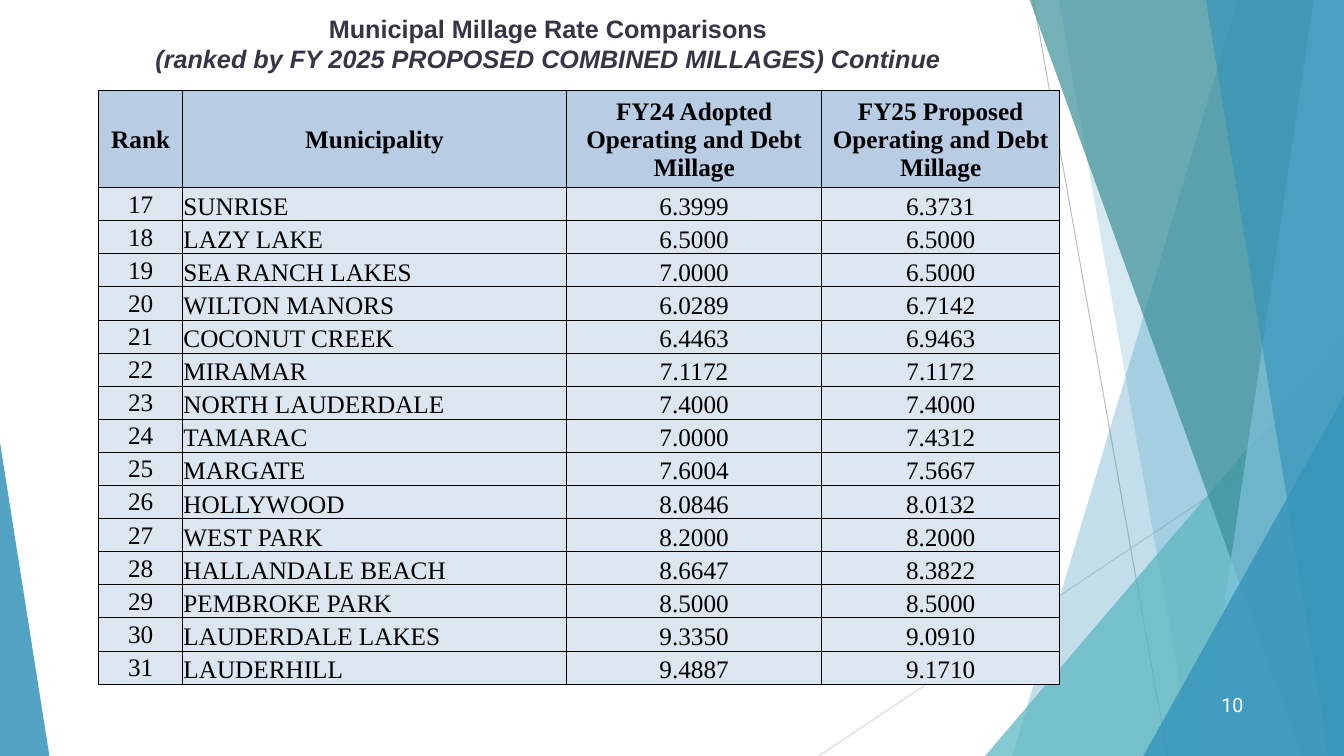
from lxml.etree import SubElement as Sub
from pptx import Presentation
from pptx.dml.color import RGBColor
from pptx.enum.shapes import MSO_CONNECTOR as Link, MSO_SHAPE as Shape
from pptx.enum.text import MSO_ANCHOR as Anchor, PP_ALIGN as Align
from pptx.oxml.ns import qn
from pptx.util import Inches, Pt

WIDE, HIGH = 13.33, 7.5
BLUE, TEAL, PINE, SKY = "3494BA", "58B6C0", "3A8F98", "7FC1DB"

TITLE = [("Municipal Millage Rate Comparisons", False),
         ("(ranked by FY 2025 PROPOSED COMBINED MILLAGES) Continue", True)]
PAGE = "10"
HEADS = ["Rank", "Municipality", "FY24 Adopted Operating and Debt Millage",
         "FY25 Proposed Operating and Debt Millage"]
FIRST = 17
RATES = [
    ("SUNRISE", "6.3999", "6.3731"),
    ("LAZY LAKE", "6.5000", "6.5000"),
    ("SEA RANCH LAKES", "7.0000", "6.5000"),
    ("WILTON MANORS", "6.0289", "6.7142"),
    ("COCONUT CREEK", "6.4463", "6.9463"),
    ("MIRAMAR", "7.1172", "7.1172"),
    ("NORTH LAUDERDALE", "7.4000", "7.4000"),
    ("TAMARAC", "7.0000", "7.4312"),
    ("MARGATE", "7.6004", "7.5667"),
    ("HOLLYWOOD", "8.0846", "8.0132"),
    ("WEST PARK", "8.2000", "8.2000"),
    ("HALLANDALE BEACH", "8.6647", "8.3822"),
    ("PEMBROKE PARK", "8.5000", "8.5000"),
    ("LAUDERDALE LAKES", "9.3350", "9.0910"),
    ("LAUDERHILL", "9.4887", "9.1710"),
]
COLS = [0.83, 3.81, 2.53, 2.36]
LEFT, TOP, TALL, HEAD = 0.98, 0.9, 5.89, 0.96

RAYS = [((10.25, 0), (11.58, HIGH), "BFBFBF"),
        ((WIDE, 4.03), (8.12, HIGH), "D9D9D9")]
# Bands run from an x on the top edge to an x on the bottom edge, then right.
# Peaks stand on the bottom edge: left, width, height, side of the tip.
DECOR = [
    ("band", (12.28, 10.04), BLUE, 30),
    ("band", (10.5, 11.83), BLUE, 20),
    ("peak", (9.77, 3.56, 4.17, 1), TEAL, 72),
    ("band", (10.21, 12.91), PINE, 70),
    ("band", (13.03, 11.92), SKY, 70),
    ("band", (11.96, 13.18), BLUE, 65),
    ("peak", (11.34, 1.99, 3.57, 1), BLUE, 80),
    ("peak", (0, 0.49, 3.11, 0), BLUE, 85),
]

deck = Presentation()
deck.slide_width, deck.slide_height = Inches(WIDE), Inches(HIGH)
slide = deck.slides.add_slide(deck.slide_layouts[6])
shapes = slide.shapes


def color(code):
    return RGBColor.from_string(code)


def paint(item, code):
    item.fill.solid()
    item.fill.fore_color.rgb = color(code)


def style(para, face, size, code, align, bold=False, italic=False):
    font = para.font
    font.name, font.size, font.bold, font.italic = face, Pt(size), bold, italic
    font.color.rgb = color(code)
    para.alignment = align


def ray(start, end, code):
    line = shapes.add_connector(Link.STRAIGHT, *map(Inches, start + end))
    line.line.color.rgb, line.line.width = color(code), Pt(0.75)
    Sub(line._element.spPr, qn("a:effectLst"))


def band(top, base):
    pen = shapes.build_freeform(Inches(top), Inches(-0.01))
    pen.add_line_segments([(Inches(x), Inches(y)) for x, y in
                           [(WIDE, -0.01), (WIDE, HIGH), (base, HIGH)]])
    return pen.convert_to_shape()


def peak(left, wide, high, tip):
    part = shapes.add_shape(Shape.ISOSCELES_TRIANGLE,
                            *map(Inches, (left, HIGH - high, wide, high)))
    part.adjustments[0] = tip
    return part


def decor(kind, spot, code, alpha):
    part = band(*spot) if kind == "band" else peak(*spot)
    part.shadow.inherit = False
    part.line.fill.background()
    paint(part, code)
    tint = part._element.spPr.find(".//" + qn("a:srgbClr"))
    Sub(tint, qn("a:alpha"), val=str(alpha * 1000))


def box(*spot):
    frame = shapes.add_textbox(*map(Inches, spot)).text_frame
    frame.word_wrap = True
    return frame


def border(cell):
    props = cell._tc.get_or_add_tcPr()
    for spot, side in enumerate(("lnL", "lnR", "lnT", "lnB")):
        edge = Sub(props, qn("a:" + side), w=str(Pt(0.5)))
        Sub(Sub(edge, qn("a:solidFill")), qn("a:srgbClr"), val="000000")
        props.insert(spot, edge)


def fill_cell(cell, text, row, col):
    head = row == 0
    cell.text = text
    cell.margin_left = cell.margin_right = cell.margin_top = Inches(0.01)
    cell.margin_bottom = 0
    cell.vertical_anchor = Anchor.MIDDLE if head or col == 0 else Anchor.BOTTOM
    align = Align.LEFT if col == 1 and not head else Align.CENTER
    style(cell.text_frame.paragraphs[0], "Times New Roman", 18, "000000",
          align, bold=head)
    paint(cell, "B8CCE4" if head else "DCE6F1")
    border(cell)


for item in RAYS:
    ray(*item)
for item in DECOR:
    decor(*item)

title = box(1.14, 0.08, 8.59, 0.71)
title.text = "\n".join(text for text, _ in TITLE)
for para, (_, italic) in zip(title.paragraphs, TITLE):
    style(para, "Arial", 18, "373545", Align.CENTER, True, italic)

page = box(11.68, 6.79, 0.75, 0.4)
page.text, page.vertical_anchor = PAGE, Anchor.MIDDLE
style(page.paragraphs[0], "Roboto", 14, "FFFFFF", Align.RIGHT)

rows = [HEADS] + [(str(rank), *rate) for rank, rate in enumerate(RATES, FIRST)]
grid = shapes.add_table(len(rows), len(COLS), *map(
    Inches, (LEFT, TOP, sum(COLS), TALL))).table
for col, wide in zip(grid.columns, COLS):
    col.width = Inches(wide)
for r, texts in enumerate(rows):
    grid.rows[r].height = Inches((TALL - HEAD) / len(RATES) if r else HEAD)
    for c, text in enumerate(texts):
        fill_cell(grid.cell(r, c), text, r, c)

deck.save("out.pptx")
